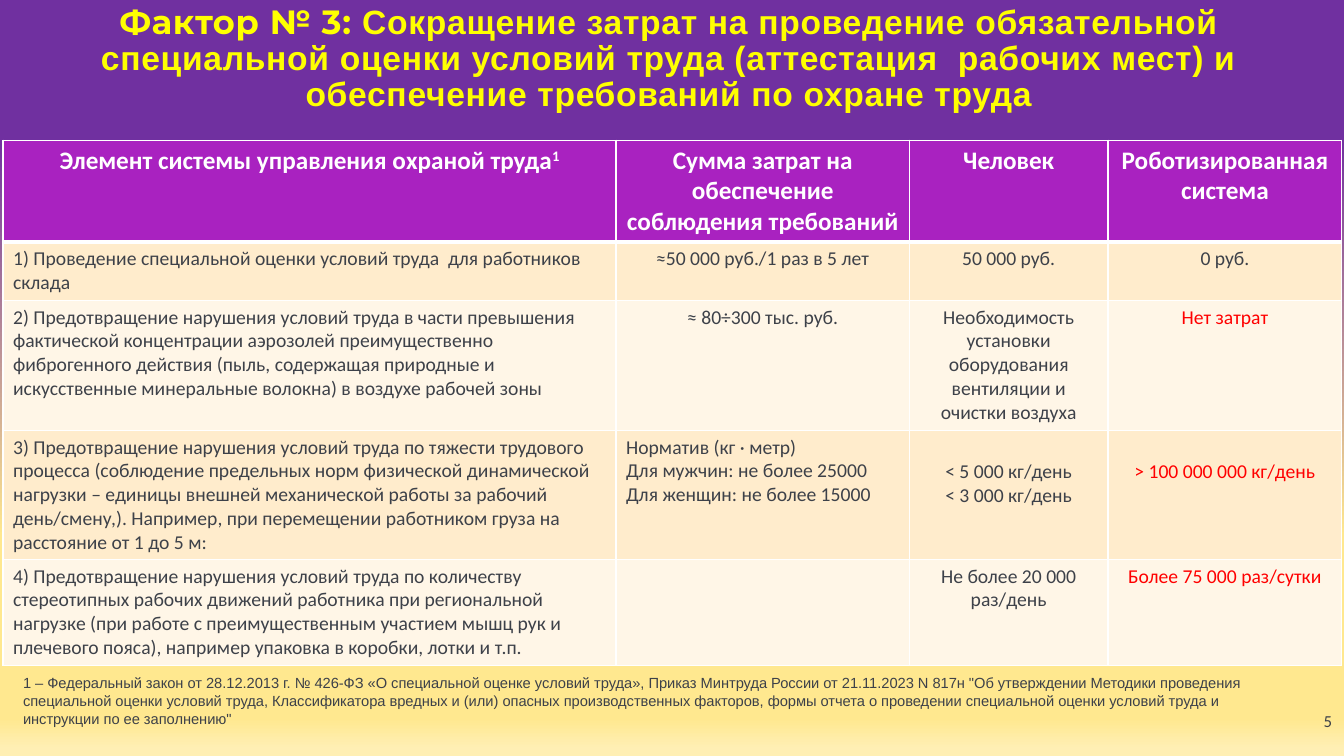
from lxml.etree import SubElement
from pptx import Presentation
from pptx.dml.color import RGBColor
from pptx.enum.text import MSO_ANCHOR as Anchor, MSO_AUTO_SIZE as AutoSize, PP_ALIGN as Align
from pptx.oxml.ns import qn
from pptx.util import Inches, Pt

PURPLE = RGBColor(0x70, 0x30, 0xA0)
GOLD = RGBColor(0xFF, 0xE8, 0x8F)
PALE_GOLD = RGBColor(0xFF, 0xEF, 0xB4)
MAGENTA = RGBColor(0xA9, 0x22, 0xC0)
PEACH = RGBColor(0xFF, 0xEC, 0xCC)
CREAM = RGBColor(0xFF, 0xF6, 0xE7)
YELLOW = RGBColor(0xFF, 0xFF, 0x00)
WHITE = RGBColor(0xFF, 0xFF, 0xFF)
GREY = RGBColor(0x3D, 0x41, 0x49)
RED = RGBColor(0xFF, 0x00, 0x00)
BLACK = RGBColor(0, 0, 0)

HEADING = {"size": Pt(24), "bold": True}
HEADER = {"name": "Calibri", "size": Pt(18), "bold": True}
BODY = {"name": "Calibri", "size": Pt(14), "bold": False}
NUMBER = {"name": "Calibri", "size": Pt(12)}
NOTE = {"name": "Arial", "size": Pt(10.5)}

BACKGROUND = [(18, PURPLE), (71, GOLD), (95, GOLD), (99, PALE_GOLD)]
TITLE = [
    ("Фактор № 3: ", "Montserrat"),
    ("Сокращение затрат на проведение обязательной специальной оценки условий труда "
     "(аттестация  рабочих мест) и обеспечение требований по охране труда", "Arial"),
]
COLUMNS = [6.08, 2.91, 1.97, 2.32]
ROWS = [1.01, 0.58, 1.29, 1.28, 1.05]
HEADERS = ["Элемент системы управления охраной труда",
           "Сумма затрат на обеспечение соблюдения требований",
           "Человек", "Роботизированная система"]
COSTS = [
    ["1) Проведение специальной оценки условий труда  для работников склада",
     "≈50 000 руб./1 раз в 5 лет", "50 000 руб.", "0 руб."],
    ["2) Предотвращение нарушения условий труда в части превышения фактической "
     "концентрации аэрозолей преимущественно фиброгенного действия (пыль, содержащая "
     "природные и искусственные минеральные волокна) в воздухе рабочей зоны",
     "≈ 80÷300 тыс. руб.",
     "Необходимость установки оборудования вентиляции и очистки воздуха", "Нет затрат"],
    ["3) Предотвращение нарушения условий труда по тяжести трудового процесса "
     "(соблюдение предельных норм физической динамической нагрузки – единицы внешней "
     "механической работы за рабочий день/смену,). Например, при перемещении работником "
     "груза на расстояние от 1 до 5 м:",
     "Норматив (кг · метр)\nДля мужчин: не более 25000\nДля женщин: не более 15000",
     "< 5 000 кг/день\n< 3 000 кг/день", "> 100 000 000 кг/день"],
    ["4) Предотвращение нарушения условий труда по количеству стереотипных рабочих "
     "движений работника при региональной нагрузке (при работе с преимущественным "
     "участием мышц рук и плечевого пояса), например упаковка в коробки, лотки и т.п.",
     "", "Не более 20 000 раз/день", "Более 75 000 раз/сутки"],
]
LOAD_ROW = 3
FOOTNOTE = (
    "1 – Федеральный закон от 28.12.2013 г. № 426-ФЗ «О специальной оценке условий труда», "
    "Приказ Минтруда России от 21.11.2023 N 817н \"Об утверждении Методики проведения "
    "специальной оценки условий труда, Классификатора вредных и (или) опасных "
    "производственных факторов, формы отчета о проведении специальной оценки условий труда "
    "и инструкции по ее заполнению\"")


class SlideBuilder:
    def __init__(self, deck):
        self.page = deck.slides.add_slide(deck.slide_layouts[5])

    def add_color(self, parent, color):
        return SubElement(parent, qn("a:srgbClr"), val=str(color))

    def background(self, stops):
        fill = self.page.background.fill
        fill.gradient()
        fill.gradient_angle = 270
        stop_list = self.page.element.find(".//" + qn("a:gsLst"))
        for stop in list(stop_list):
            stop_list.remove(stop)
        for percent, color in stops:
            self.add_color(SubElement(stop_list, qn("a:gs"), pos=str(percent * 1000)), color)

    def add_span(self, para, text, color, style):
        span = para.add_run()
        span.text = text
        for name, value in style.items():
            setattr(span.font, name, value)
        span.font.color.rgb = color
        return span

    def place(self, box, area):
        for name, value in zip(("left", "top", "width", "height"), area):
            setattr(box, name, Inches(value))

    def cast_shadow(self, span):
        properties = span._r.get_or_add_rPr()
        properties.set("spc", "50")
        effects = SubElement(properties, qn("a:effectLst"))
        shadow = SubElement(effects, qn("a:outerShdw"), blurRad="38100", dist="38100",
                            dir="2700000", algn="tl")
        SubElement(self.add_color(shadow, BLACK), qn("a:alpha"), val="43000")
        properties.find(qn("a:solidFill")).addnext(effects)

    def title(self, area, pieces):
        box = self.page.shapes.title
        self.place(box, area)
        frame = box.text_frame
        for name, value in {"vertical_anchor": Anchor.TOP, "word_wrap": True,
                            "auto_size": AutoSize.NONE}.items():
            setattr(frame, name, value)
        para = frame.paragraphs[0]
        para.alignment = Align.CENTER
        para.line_spacing = 0.9
        for text, face in pieces:
            self.cast_shadow(self.add_span(para, text, YELLOW, {**HEADING, "name": face}))

    def text(self, area, text, style, align=Align.LEFT, anchor=Anchor.TOP):
        box = self.page.shapes.add_textbox(*map(Inches, area))
        box.text_frame.word_wrap = True
        box.text_frame.vertical_anchor = anchor
        para = box.text_frame.paragraphs[0]
        para.alignment = align
        self.add_span(para, text, GREY, style)

    def cell(self, cell, text, fill, color, style, align, top=1, bottom=1):
        properties = cell._tc.get_or_add_tcPr()
        for side, points in {"L": 1, "R": 1, "T": top, "B": bottom}.items():
            line = SubElement(properties, qn("a:ln" + side), w=str(int(Pt(points))))
            self.add_color(SubElement(line, qn("a:solidFill")), WHITE)
        cell.fill.solid()
        cell.fill.fore_color.rgb = fill
        for index, part in enumerate(text.split("\n") if text else []):
            para = cell.text_frame.add_paragraph() if index else cell.text_frame.paragraphs[0]
            para.alignment = align
            self.add_span(para, part, color, style)

    def table(self, area, headers, records):
        grid = self.page.shapes.add_table(len(ROWS), len(COLUMNS), *map(Inches, area)).table
        for column, width in zip(grid.columns, COLUMNS):
            column.width = Inches(width)
        for row, height in zip(grid.rows, ROWS):
            row.height = Inches(height)
        for index, text in enumerate(headers):
            self.cell(grid.cell(0, index), text, MAGENTA, WHITE, HEADER, Align.CENTER, bottom=3)
        mark = self.add_span(grid.cell(0, 0).text_frame.paragraphs[0], "1", WHITE, HEADER)
        mark._r.get_or_add_rPr().set("baseline", "30000")
        for number, record in enumerate(records, 1):
            for index, text in enumerate(record):
                left = index == 0 or (number == LOAD_ROW and index == 1)
                self.cell(grid.cell(number, index), text,
                          PEACH if number % 2 else CREAM,
                          RED if index == 3 and number > 1 else GREY,
                          BODY, Align.LEFT if left else Align.CENTER,
                          top=3 if number == 1 else 1)
        for index in (2, 3):
            grid.cell(LOAD_ROW, index).margin_top = Inches(0.29)


def main():
    deck = Presentation()
    deck.slide_width, deck.slide_height = Inches(13.33), Inches(7.5)
    slide = SlideBuilder(deck)
    slide.background(BACKGROUND)
    slide.text((10.31, 6.95, 3, 0.4), "5", NUMBER, Align.RIGHT, Anchor.MIDDLE)
    slide.title((-0.01, 0, 13.29, 1.49), TITLE)
    slide.table((0.03, 1.39, 13.28, 5.21), HEADERS, COSTS)
    slide.text((0.13, 6.64, 12.78, 0.63), FOOTNOTE, NOTE)
    deck.save("out.pptx")


if __name__ == "__main__":
    main()
